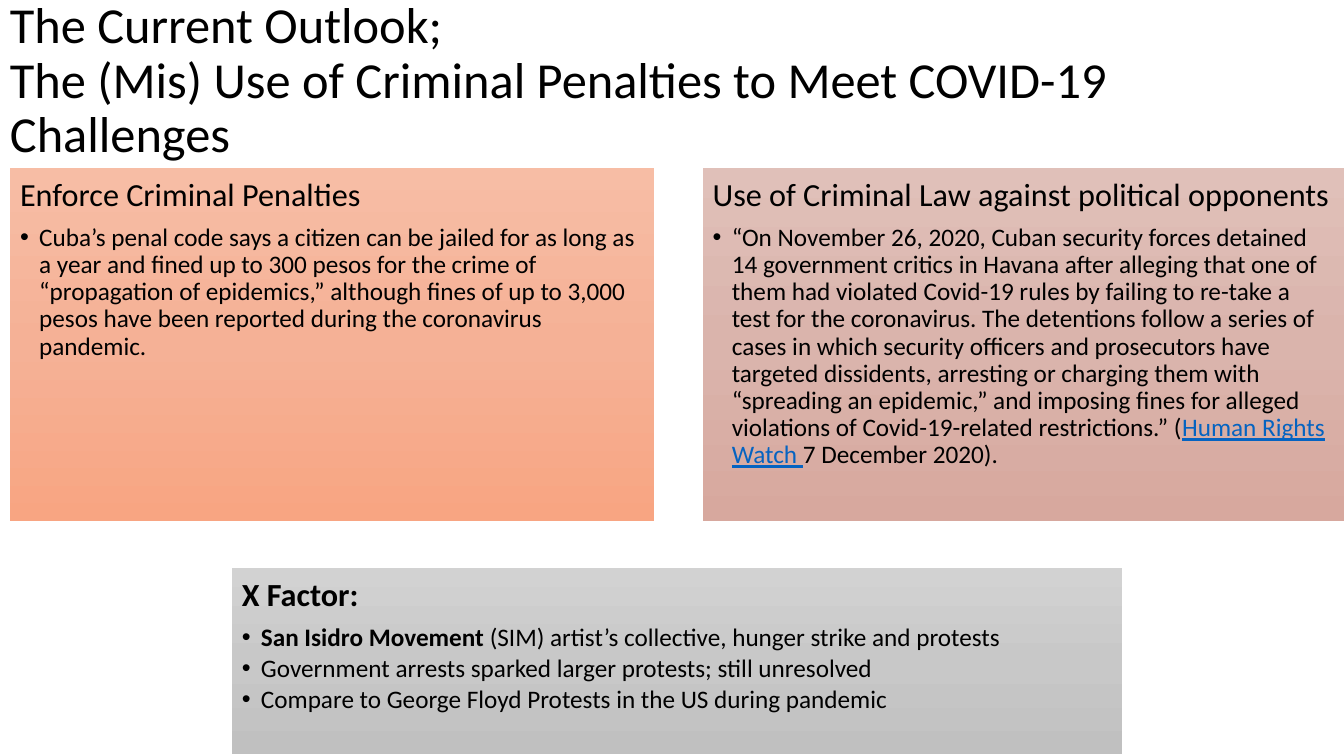
from copy import deepcopy

from lxml import etree
from pptx import Presentation
from pptx.dml.color import RGBColor
from pptx.enum.shapes import MSO_SHAPE
from pptx.enum.text import MSO_ANCHOR, PP_ALIGN
from pptx.oxml.ns import qn
from pptx.util import Inches, Pt

RECTANGLE = MSO_SHAPE.RECTANGLE
TOP, MIDDLE = MSO_ANCHOR.TOP, MSO_ANCHOR.MIDDLE
LEFT = PP_ALIGN.LEFT

BLACK = RGBColor(0x00, 0x00, 0x00)
LINK_BLUE = RGBColor(0x05, 0x63, 0xC1)
ORANGES = [RGBColor(0xF7, 0xBD, 0xA5), RGBColor(0xF5, 0xB1, 0x96), RGBColor(0xF8, 0xA5, 0x82)]
ROSES = [RGBColor(0xE0, 0xC0, 0xB9), RGBColor(0xDA, 0xB4, 0xAC), RGBColor(0xD7, 0xA8, 0x9E)]
GREYS = [RGBColor(0xD2, 0xD2, 0xD2), RGBColor(0xC8, 0xC8, 0xC8), RGBColor(0xC0, 0xC0, 0xC0)]

FONT = "Calibri"
SLIDE_WIDTH, SLIDE_HEIGHT = 13.33, 7.5
INSET = Inches(0.1)
INDENT = Inches(0.19)
UPPER_TOP, UPPER_HEIGHT = 1.67, 3.5


def add_run(paragraph, text, size, bold=False, color=BLACK):
    run = paragraph.add_run()
    run.text = text
    run.font.name = FONT
    run.font.size = Pt(size)
    run.font.bold = bold
    run.font.color.rgb = color
    run.font.underline = color == LINK_BLUE


def fill_gradient(shape, colors):
    shape.fill.gradient()
    shape.fill.gradient_angle = 270
    stop_list = shape._element.spPr.find(qn("a:gradFill")).find(qn("a:gsLst"))
    stop_list.insert(1, deepcopy(stop_list[0]))
    for index, (stop, color) in enumerate(zip(shape.fill.gradient_stops, colors)):
        stop.position = index / 2
        stop.color.rgb = color


presentation = Presentation()
presentation.slide_width = Inches(SLIDE_WIDTH)
presentation.slide_height = Inches(SLIDE_HEIGHT)
slide = presentation.slides.add_slide(presentation.slide_layouts[6])

title = slide.shapes.add_textbox(0, Inches(0.08), Inches(SLIDE_WIDTH), Inches(1.47))
title.text_frame.word_wrap = True
title.text_frame.vertical_anchor = MIDDLE
paragraph = title.text_frame.paragraphs[0]
paragraph.line_spacing = 0.9
add_run(paragraph, "The Current Outlook;", 36)
paragraph.add_line_break()
add_run(paragraph, "The (Mis) Use of Criminal Penalties to Meet COVID-19 Challenges", 36)

panels = [
    ((0.1, UPPER_TOP, 6.39, UPPER_HEIGHT), ORANGES, "Enforce Criminal Penalties", False, [
        [("Cuba’s penal code says a citizen can be jailed for as long as a year and fined up to "
          "300 pesos for the crime of “propagation of epidemics,” although fines of up to 3,000 "
          "pesos have been reported during the coronavirus pandemic.",)],
    ]),
    ((6.97, UPPER_TOP, 6.36, UPPER_HEIGHT), ROSES,
     "Use of Criminal Law against political opponents", False, [
        [("“On November 26, 2020, Cuban security forces detained 14 government critics in Havana "
          "after alleging that one of them had violated Covid-19 rules by failing to re-take a "
          "test for the coronavirus. The detentions follow a series of cases in which security "
          "officers and prosecutors have targeted dissidents, arresting or charging them with "
          "“spreading an epidemic,” and imposing fines for alleged violations of "
          "Covid-19-related restrictions.” (",),
         ("Human Rights Watch ", False, LINK_BLUE),
         ("7 December 2020).",)],
    ]),
    ((2.3, 5.64, 8.83, 1.84), GREYS, "X Factor:", True, [
        [("San Isidro Movement ", True),
         ("(SIM) artist’s collective, hunger strike and protests",)],
        [("Government arrests sparked larger protests; still unresolved",)],
        [("Compare to George Floyd Protests in the US during pandemic",)],
    ]),
]

for box, colors, heading, heading_bold, bullets in panels:
    shape = slide.shapes.add_shape(RECTANGLE, *[Inches(length) for length in box])
    shape.shadow.inherit = False
    shape.line.fill.background()
    fill_gradient(shape, colors)

    frame = shape.text_frame
    frame.word_wrap = True
    frame.vertical_anchor = TOP
    frame.margin_left = frame.margin_right = INSET
    frame.margin_top = frame.margin_bottom = INSET

    paragraph = frame.paragraphs[0]
    paragraph.alignment = LEFT
    paragraph.line_spacing = 0.9
    paragraph.space_after = Pt(8)
    add_run(paragraph, heading, 23, heading_bold)

    for runs in bullets:
        paragraph = frame.add_paragraph()
        paragraph.level = 1
        paragraph.alignment = LEFT
        properties = paragraph._p.get_or_add_pPr()
        properties.set("marL", str(INDENT))
        properties.set("indent", str(-INDENT))
        etree.SubElement(properties, qn("a:buFont")).set("typeface", "Arial")
        etree.SubElement(properties, qn("a:buChar")).set("char", "•")
        paragraph.line_spacing = 0.9
        paragraph.space_after = Pt(2.7)
        for text, *style in runs:
            add_run(paragraph, text, 18, *style)

presentation.save("out.pptx")
